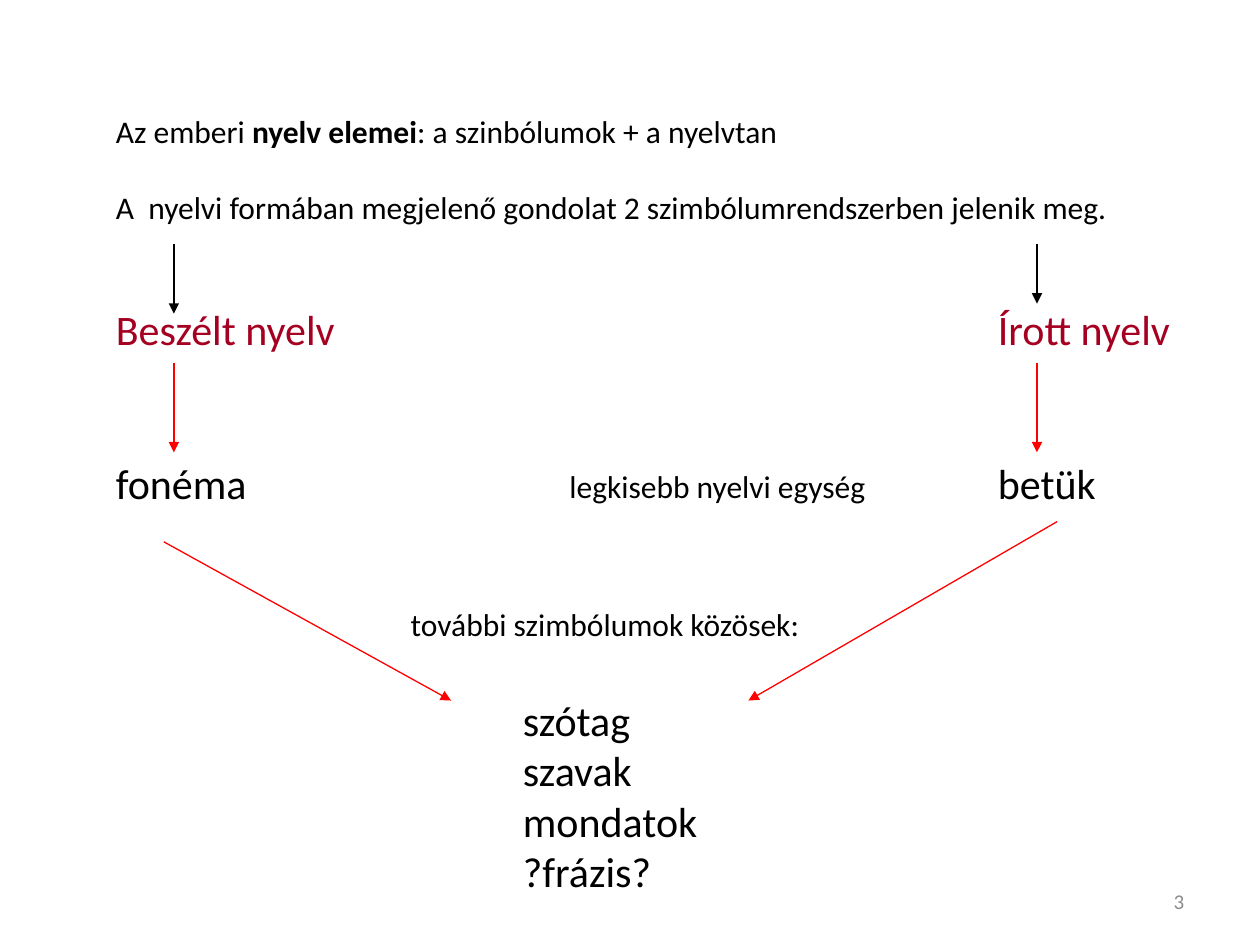
import pptx
import pptx.util
import pptx.dml.color
import pptx.enum.shapes
import pptx.enum.text
import pptx.oxml
import pptx.oxml.ns
import lxml.etree
from dataclasses import dataclass

Inches = pptx.util.Inches
Pt = pptx.util.Pt
RGB = pptx.dml.color.RGBColor.from_string


@dataclass(frozen=True)
class Theme:
    font: str = "Calibri"
    black: str = "000000"
    crimson: str = "A50021"
    red: str = "FF0000"
    gray: str = "8C8C8C"
    large: int = 24
    body: int = 18
    small: int = 12
    line: float = 0.75


theme = Theme()

presentation = pptx.Presentation()
presentation.slide_width = Inches(10)
presentation.slide_height = Inches(7.5)
slide = presentation.slides.add_slide(presentation.slide_layouts[6])


def add_text(left, top, width, height, lines, size, color):
    """Add a text box without insets, one paragraph for each line."""
    frame = slide.shapes.add_textbox(
        Inches(left), Inches(top), Inches(width), Inches(height)).text_frame
    frame.word_wrap = True
    frame.margin_left = frame.margin_right = 0
    frame.margin_top = frame.margin_bottom = 0
    frame.text = "\n".join(lines)
    for paragraph in frame.paragraphs:
        paragraph.font.name = theme.font
        paragraph.font.size = Pt(size)
        paragraph.font.color.rgb = RGB(color)
    return frame


def add_arrow(start, end, color):
    arrow = slide.shapes.add_connector(
        pptx.enum.shapes.MSO_CONNECTOR.STRAIGHT,
        *(Inches(value) for value in start + end))
    arrow.line.color.rgb = RGB(color)
    arrow.line.width = Pt(theme.line)
    qn = pptx.oxml.ns.qn
    properties = arrow.line._get_or_add_ln()
    lxml.etree.SubElement(properties, qn("a:tailEnd"), type="triangle")
    lxml.etree.SubElement(arrow._element.spPr, qn("a:effectLst"))


# Introduction
intro = add_text(0.92, 0.89, 8.5, 0.92, [
    "",
    "A  nyelvi formában megjelenő gondolat 2 szimbólumrendszerben jelenik meg.",
], theme.body, theme.black)
elements, systems = intro.paragraphs
for words, bold in [("Az emberi ", False), ("nyelv elemei", True),
                    (": a szinbólumok + a nyelvtan", False)]:
    run = elements.add_run()
    run.text = words
    run.font.bold = bold
systems.space_before = Pt(22)

# Spoken and written language, each with its smallest unit
spoken_left, written_left = 0.92, 7.92
for left, language, unit in [(spoken_left, "Beszélt nyelv", "fonéma"),
                             (written_left, "Írott nyelv", "betük")]:
    add_text(left, 2.41, 2, 0.41, [language], theme.large, theme.crimson)
    add_text(left, 3.63, 2, 0.41, [unit], theme.large, theme.black)

# Captions and shared symbols
add_text(4.52, 3.71, 2.6, 0.31, ["legkisebb nyelvi egység"], theme.body, theme.black)
add_text(3.26, 4.8, 3.4, 0.31, ["további szimbólumok közösek:"], theme.body, theme.black)
add_text(4.15, 5.51, 2, 1.63, ["szótag", "szavak", "mondatok", "?frázis?"],
         theme.large, theme.black)

# Arrows down each branch, then together to the shared symbols
for x, language_y in [(1.38, 2.49), (8.23, 2.41)]:
    add_arrow((x, 1.94), (x, language_y), theme.black)
    add_arrow((x, 2.88), (x, 3.59), theme.red)
add_arrow((1.3, 4.3), (3.58, 5.56), theme.red)
add_arrow((8.39, 4.14), (5.94, 5.56), theme.red)

# Slide number
page_number = add_text(7.17, 6.95, 2.23, 0.4, ["3"], theme.small, theme.gray)
page_number.vertical_anchor = pptx.enum.text.MSO_ANCHOR.MIDDLE
page_number.paragraphs[0].alignment = pptx.enum.text.PP_ALIGN.RIGHT

presentation.save("out.pptx")
